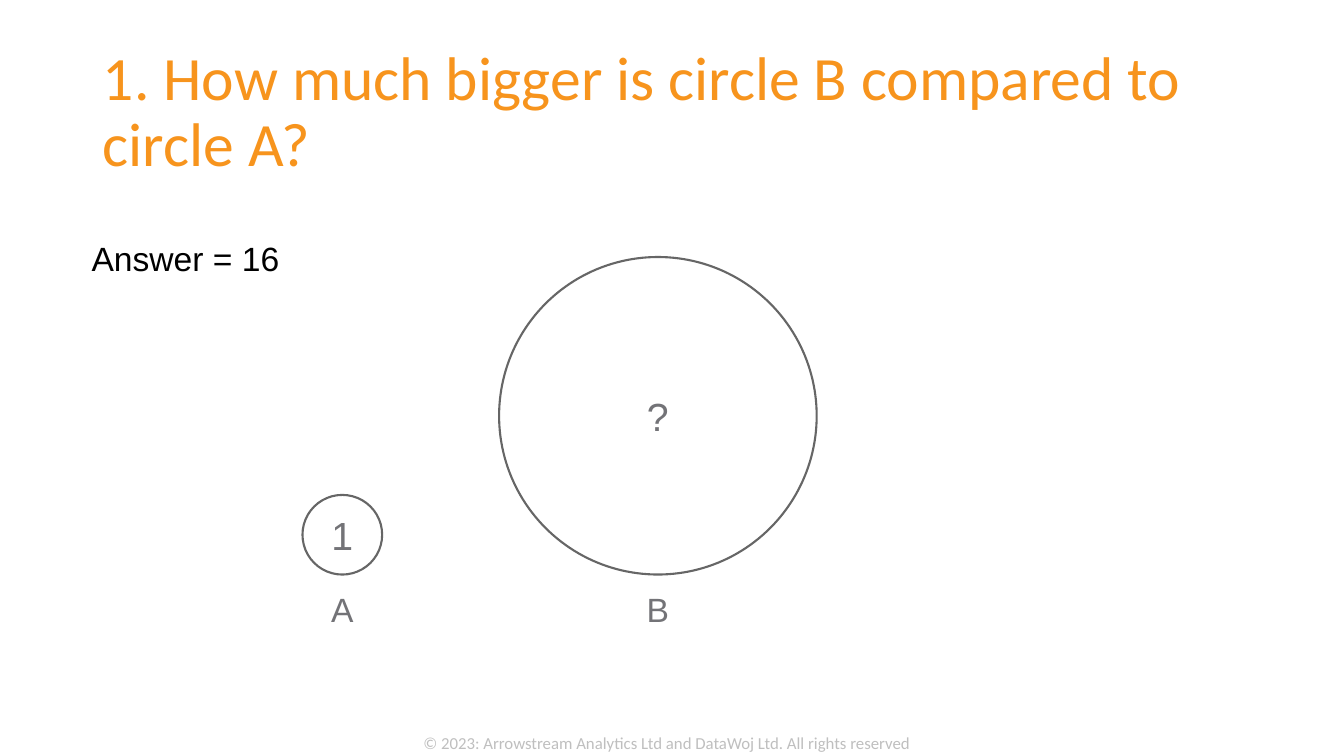
from pptx import Presentation
from pptx.dml.color import RGBColor
from pptx.enum import shapes, text
from pptx.util import Inches, Pt

GREY = "737377"
OUTLINE = "666666"


def color(value):
    return RGBColor.from_string(value)


def write(shape, words, size, font, ink, align=text.PP_ALIGN.LEFT,
          anchor=text.MSO_ANCHOR.TOP, wrap=False):
    frame = shape.text_frame
    frame.word_wrap = wrap
    frame.vertical_anchor = anchor
    frame.text = words
    para = frame.paragraphs[0]
    para.alignment = align
    para.font.size = Pt(size)
    para.font.name = font
    para.font.color.rgb = color(ink)
    return para


def add_title(page, words):
    title = page.shapes.title
    title.left, title.top = Inches(0.92), Inches(0.4)
    title.width, title.height = Inches(11.5), Inches(1.45)
    para = write(title, words, 44, "Calibri", "F7941D",
                 anchor=text.MSO_ANCHOR.MIDDLE, wrap=True)
    para.line_spacing = 0.9


def add_label(page, words, left, top, width, height, size, font, ink,
              align=text.PP_ALIGN.LEFT):
    box = page.shapes.add_textbox(Inches(left), Inches(top),
                                  Inches(width), Inches(height))
    write(box, words, size, font, ink, align)


def add_circle(page, words, left, diameter, name, baseline=5.7):
    """Draw a circle standing on the baseline, with its name centred below."""
    circle = page.shapes.add_shape(
        shapes.MSO_SHAPE.OVAL, Inches(left), Inches(baseline - diameter),
        Inches(diameter), Inches(diameter))
    circle.shadow.inherit = False
    circle.fill.background()
    circle.line.color.rgb = color(OUTLINE)
    circle.line.width = Pt(1.5)
    write(circle, words, 28, "Arial", GREY, text.PP_ALIGN.CENTER,
          text.MSO_ANCHOR.MIDDLE)
    label_width = 0.42
    add_label(page, name, left + (diameter - label_width) / 2, baseline + 0.09,
              label_width, 0.51, 24, "Arial", GREY, text.PP_ALIGN.CENTER)


def main():
    deck = Presentation()
    deck.slide_width, deck.slide_height = Inches(13.33), Inches(7.5)
    page = deck.slides.add_slide(deck.slide_layouts.get_by_name("Title Only"))
    add_title(page, "1. How much bigger is circle B compared to circle A?")
    add_circle(page, "1", 3, 0.79, "A")
    add_circle(page, "?", 4.95, 3.15, "B")
    add_label(page, "Answer = 16", 0.81, 2.31, 2.36, 0.5, 24, "Arial", "000000")
    add_label(page, "© 2023: Arrowstream Analytics Ltd and DataWoj Ltd. "
              "All rights reserved", 4.1, 7.22, 5.13, 0.3, 12, "Calibri", "BFBFBF")
    deck.save("out.pptx")


if __name__ == "__main__":
    main()
